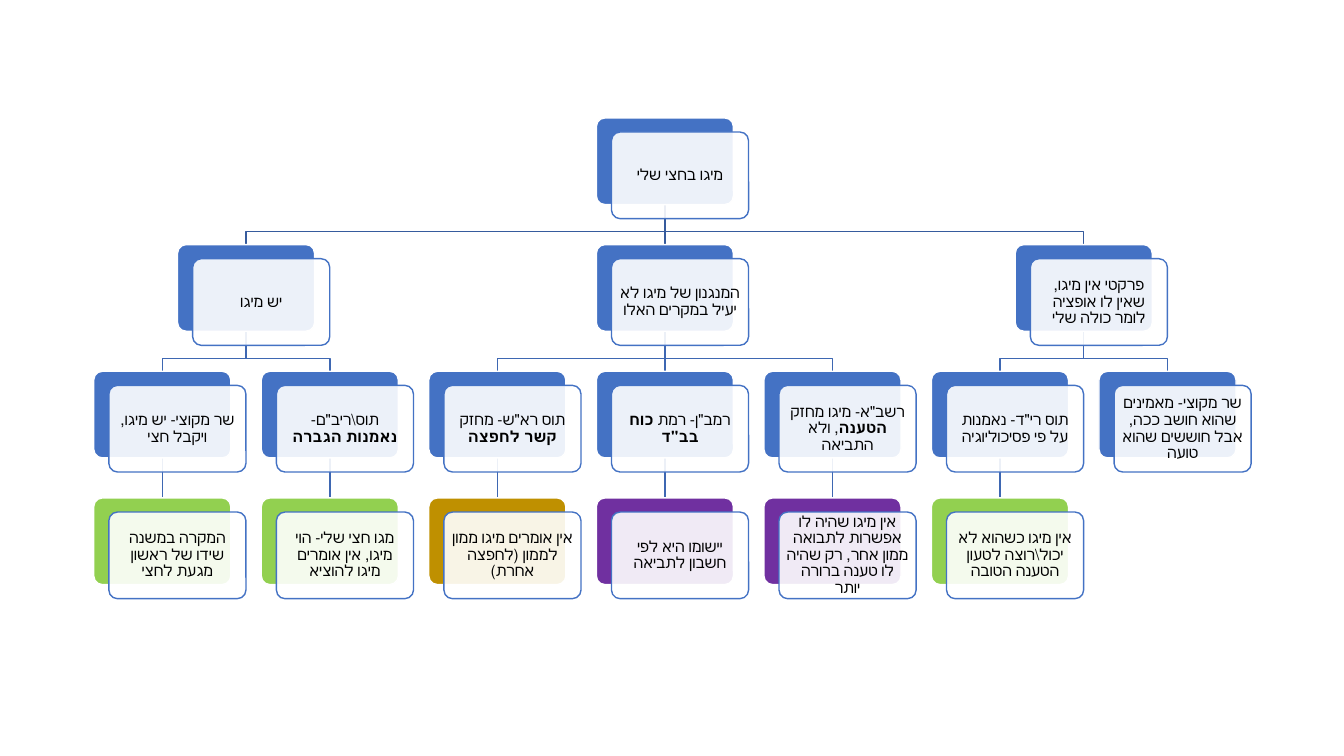
from lxml.etree import SubElement
from pptx import Presentation
from pptx.dml.color import RGBColor
from pptx.enum.shapes import MSO_CONNECTOR, MSO_SHAPE
from pptx.enum.text import MSO_ANCHOR, PP_ALIGN
from pptx.oxml.ns import qn
from pptx.util import Inches, Pt

BLUE, GREEN, GOLD, PURPLE = "4472C4", "92D050", "BF9000", "7030A0"
LINE_COLOURS = ["365B9D", "3E67B2", "3E67B2"]  # one per gap between levels

LEFT, TOP = 0.93, 1.17
COLUMN, ROW = 9.97 / 6, 3.77 / 3
CARD_WIDTH, CARD_HEIGHT = 1.36, 0.86
FRONT_SHIFT_X, FRONT_SHIFT_Y = 0.15, 0.14
BEND = 0.27  # drop below a parent before its line turns

# column, level, column of the parent, colour, text (bold between asterisks)
CARDS = [
    (3, 0, None, BLUE, "מיגו בחצי שלי"),
    (0.5, 1, 3, BLUE, "יש מיגו"),
    (0, 2, 0.5, BLUE, "שר מקוצי- יש מיגו, ויקבל חצי"),
    (0, 3, 0, GREEN, "המקרה במשנה שידו של ראשון מגעת לחצי"),
    (1, 2, 0.5, BLUE, "תוס\\ריב\"ם- *נאמנות הגברה*"),
    (1, 3, 1, GREEN, "מגו חצי שלי- הוי מיגו, אין אומרים מיגו להוציא"),
    (3, 1, 3, BLUE, "המנגנון של מיגו לא יעיל במקרים האלו"),
    (2, 2, 3, BLUE, "תוס רא\"ש- מחזק *קשר לחפצה*"),
    (2, 3, 2, GOLD, "אין אומרים מיגו ממון לממון (לחפצה אחרת)"),
    (3, 2, 3, BLUE, "רמב\"ן- רמת *כוח בב\"ד*"),
    (3, 3, 3, PURPLE, "יישומו היא לפי חשבון לתביאה"),
    (4, 2, 3, BLUE, "רשב\"א- מיגו מחזק *הטענה*, ולא התביאה"),
    (4, 3, 4, PURPLE,
     "אין מיגו שהיה לו אפשרות לתבואה ממון אחר, רק שהיה לו טענה ברורה יותר"),
    (5.5, 1, 3, BLUE, "פרקטי אין מיגו, שאין לו אופציה לומר כולה שלי"),
    (5, 2, 5.5, BLUE, "תוס רי\"ד- נאמנות על פי פסיכוליוגיה"),
    (5, 3, 5, GREEN, "אין מיגו כשהוא לא יכול\\רוצה לטעון הטענה הטובה"),
    (6, 2, 5.5, BLUE, "שר מקוצי- מאמינים שהוא חושב ככה, אבל חוששים שהוא טועה"),
]

deck = Presentation()
deck.slide_width, deck.slide_height = Inches(13.33), Inches(7.5)
page = deck.slides.add_slide(deck.slide_layouts[6])


def add_card(left, top, fill, line):
    card = page.shapes.add_shape(
        MSO_SHAPE.ROUNDED_RECTANGLE, Inches(left), Inches(top),
        Inches(CARD_WIDTH), Inches(CARD_HEIGHT))
    card.adjustments[0] = 0.1
    card.shadow.inherit = False
    card.fill.solid()
    card.fill.fore_color.rgb = RGBColor.from_string(fill)
    card.line.color.rgb = RGBColor.from_string(line)
    card.line.width = Pt(1)
    return card


def write_text(card, text, size=11, font="Calibri", hebrew_font="+mn-cs", colour="000000"):
    """Fill the card with centred right-to-left text; asterisks enclose bold."""
    frame = card.text_frame
    frame.word_wrap = True
    frame.vertical_anchor = MSO_ANCHOR.MIDDLE
    frame.margin_left = frame.margin_right = Inches(0.05)
    frame.margin_top = frame.margin_bottom = Inches(0.05)
    para = frame.paragraphs[0]
    para.alignment = PP_ALIGN.CENTER
    para.line_spacing = 0.9
    para._p.get_or_add_pPr().set("rtl", "1")
    for index, part in enumerate(text.split("*")):
        if not part:
            continue
        span = para.add_run()
        span.text = part
        span.font.size = Pt(size)
        span.font.bold = index % 2 == 1
        span.font.name = font
        span.font.color.rgb = RGBColor.from_string(colour)
        properties = span._r.get_or_add_rPr()
        properties.set("lang", "he-IL")
        SubElement(properties, qn("a:cs"), typeface=hebrew_font)


# Lines from each parent down to its children, behind the cards
for column, level, parent, _, _ in CARDS:
    if parent is None:
        continue
    child_x = Inches(LEFT + column * COLUMN + CARD_WIDTH / 2)
    child_y = Inches(TOP + level * ROW)
    parent_x = Inches(LEFT + parent * COLUMN + CARD_WIDTH / 2)
    parent_y = Inches(TOP + (level - 1) * ROW + CARD_HEIGHT)
    if parent == column:
        link = page.shapes.add_connector(
            MSO_CONNECTOR.STRAIGHT, parent_x, parent_y, child_x, child_y)
        SubElement(link._element.spPr, qn("a:effectLst"))
    else:
        bend_y = parent_y + Inches(BEND)
        outline = page.shapes.build_freeform(parent_x, parent_y)
        outline.add_line_segments(
            [(parent_x, bend_y), (child_x, bend_y), (child_x, child_y)], close=False)
        link = outline.convert_to_shape()
        link.shadow.inherit = False
        link.fill.background()
    link.line.color.rgb = RGBColor.from_string(LINE_COLOURS[level - 1])
    link.line.width = Pt(1)

# Each card: a coloured back and a nearly opaque white front holding the text
for column, level, _, colour, text in CARDS:
    left, top = LEFT + column * COLUMN, TOP + level * ROW
    add_card(left, top, colour, "FFFFFF")
    front = add_card(left + FRONT_SHIFT_X, top + FRONT_SHIFT_Y, "FFFFFF", BLUE)
    white = front._element.spPr.find(qn("a:solidFill")).find(qn("a:srgbClr"))
    SubElement(white, qn("a:alpha"), val="90000")
    write_text(front, text)

deck.save("out.pptx")
